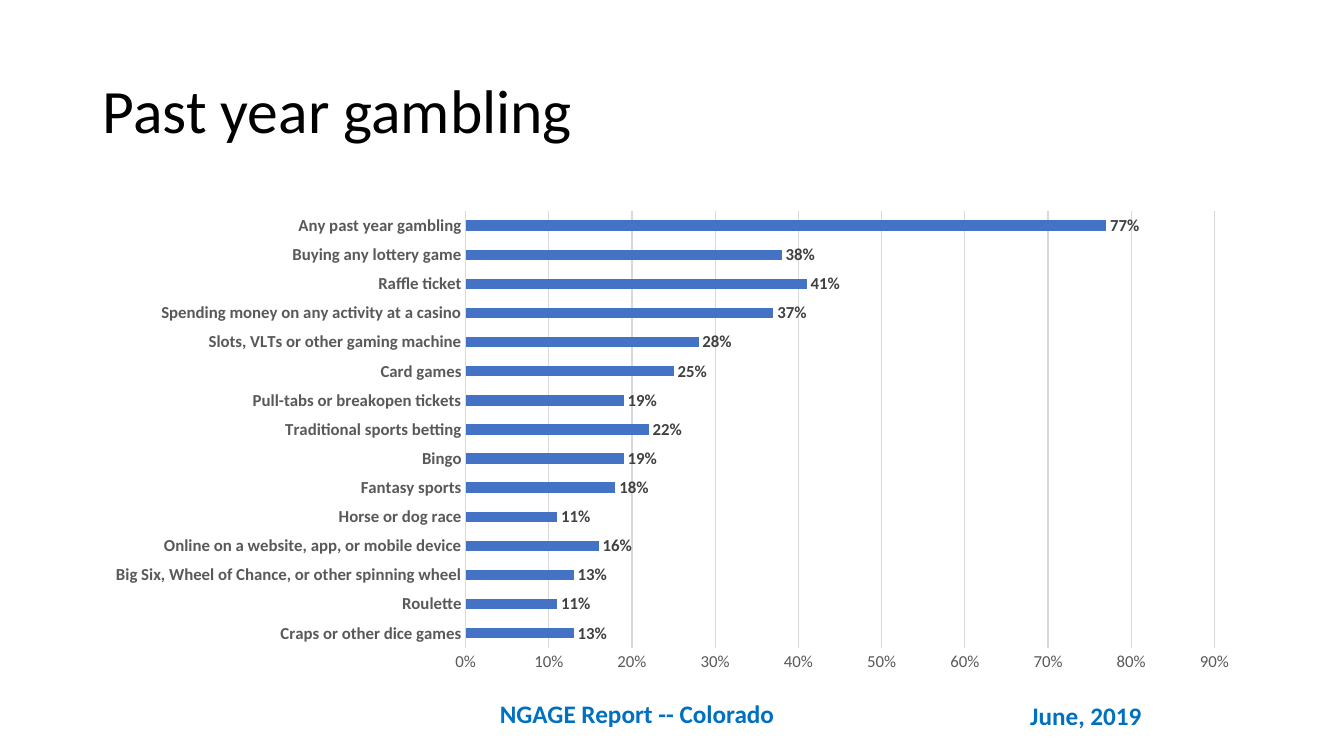
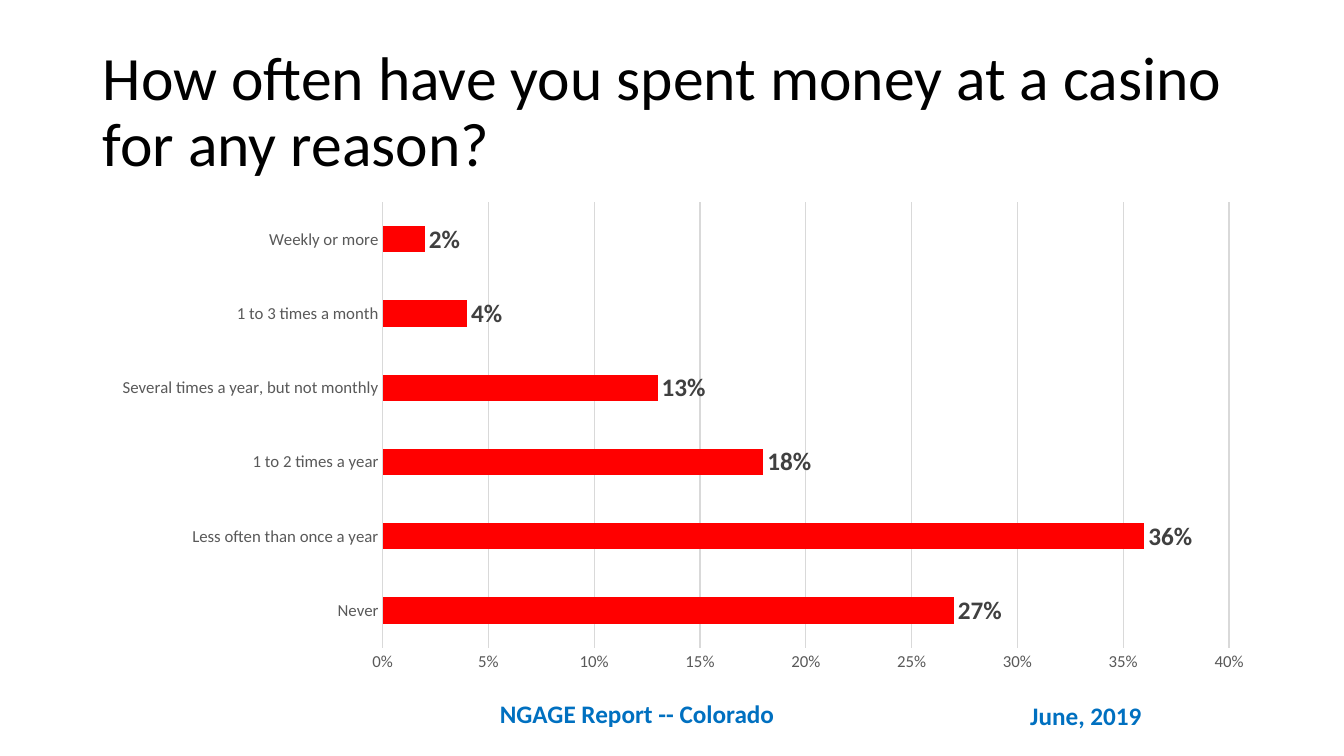
"""Build two bar chart slides on past year gambling and casino spending."""
from lxml.etree import SubElement as Sub
from pptx import Presentation
from pptx.chart.data import CategoryChartData as Data
from pptx.dml.color import RGBColor as RGB
from pptx.enum.chart import XL_CHART_TYPE as Kind
from pptx.enum.chart import XL_LABEL_POSITION as Spot
from pptx.enum.chart import XL_TICK_MARK as Tick
from pptx.enum.text import MSO_ANCHOR as Anchor
from pptx.enum.text import MSO_AUTO_SIZE as Fit
from pptx.enum.text import PP_ALIGN as Align
from pptx.oxml.ns import qn
from pptx.util import Pt

PX = 9144
FACE = "Calibri"
HUE = {"black": "000000", "foot": "0070C0", "axis": "595959",
       "label": "404040", "grid": "D9D9D9", "blue": "4472C4", "red": "FF0000"}
SIZE = (1333, 750)
TITLE = (92, 40, 1150, 145)
CHART = (92, 200, 1150, 476)
FOOT = [
    ("June, 2019", (1012, 690, 143, 40)),
    ("NGAGE Report -- Colorado", (486, 688, 360, 40)),
]
PAGES = [
    {"title": "Past year gambling",
     "hue": "blue", "bold": True, "size": 12, "top": 0.9, "step": 0.1,
     "plot": None,
     "rows": [
         ("Craps or other dice games", 0.13),
         ("Roulette", 0.11),
         ("Big Six, Wheel of Chance, or other spinning wheel", 0.13),
         ("Online on a website, app, or mobile device", 0.16),
         ("Horse or dog race", 0.11),
         ("Fantasy sports", 0.18),
         ("Bingo", 0.19),
         ("Traditional sports betting", 0.22),
         ("Pull-tabs or breakopen tickets", 0.19),
         ("Card games", 0.25),
         ("Slots, VLTs or other gaming machine", 0.28),
         ("Spending money on any activity at a casino", 0.37),
         ("Raffle ticket", 0.41),
         ("Buying any lottery game", 0.38),
         ("Any past year gambling", 0.77),
     ]},
    {"title": "How often have you spent money at a casino for any reason?",
     "hue": "red", "bold": False, "size": 18, "top": 0.4, "step": 0.05,
     "plot": {"x": 0.25, "y": 0, "w": 0.73, "h": 0.93},
     "rows": [
         ("Never", 0.27),
         ("Less often than once a year", 0.36),
         ("1 to 2 times a year", 0.18),
         ("Several times a year, but not monthly", 0.13),
         ("1 to 3 times a month", 0.04),
         ("Weekly or more", 0.02),
     ]},
]


def emu(box):
    return [n * PX for n in box]


def tint(hue):
    return RGB.from_string(HUE[hue])


def style(font, size, hue, bold=False):
    font.name, font.size, font.bold = FACE, Pt(size), bold
    font.color.rgb = tint(hue)


def put(shape, text, size, hue, bold=False, anchor=Anchor.TOP, lead=1.0):
    frame = shape.text_frame
    frame.text = text
    frame.word_wrap = True
    frame.auto_size = Fit.NONE
    frame.vertical_anchor = anchor
    para = frame.paragraphs[0]
    para.alignment = Align.LEFT
    para.line_spacing = lead
    style(para.runs[0].font, size, hue, bold)


def rule(line):
    line.color.rgb = tint("grid")
    line.width = Pt(0.75)


def pin(chart, plot):
    area = chart.element.find(".//" + qn("c:plotArea"))
    old = area.find(qn("c:layout"))
    if old is not None:
        area.remove(old)
    lay = Sub(area, qn("c:layout"))
    area.insert(0, lay)
    man = Sub(lay, qn("c:manualLayout"))
    Sub(man, qn("c:layoutTarget")).set("val", "inner")
    for key in "xy":
        Sub(man, qn(f"c:{key}Mode")).set("val", "edge")
    for key, val in plot.items():
        Sub(man, qn(f"c:{key}")).set("val", str(val))


def draw(slide, page):
    data = Data(number_format="0%")
    data.categories = [name for name, _ in page["rows"]]
    data.add_series("Series 1", [val for _, val in page["rows"]])
    chart = slide.shapes.add_chart(Kind.BAR_CLUSTERED, *emu(CHART), data).chart
    chart.has_title = chart.has_legend = False
    style(chart.font, 10, "black")

    cat, val = chart.category_axis, chart.value_axis
    for axis, bold in ((cat, page["bold"]), (val, False)):
        axis.major_tick_mark = axis.minor_tick_mark = Tick.NONE
        style(axis.tick_labels.font, 12, "axis", bold)
    rule(cat.format.line)
    val.format.line.fill.background()
    rule(val.major_gridlines.format.line)
    val.minimum_scale, val.maximum_scale = 0, page["top"]
    val.major_unit = page["step"]
    val.tick_labels.number_format = "0%"
    val.tick_labels.number_format_is_linked = False

    plot = chart.plots[0]
    plot.gap_width = 182
    plot.vary_by_categories = False
    bars = plot.series[0]
    bars.format.fill.solid()
    bars.format.fill.fore_color.rgb = tint(page["hue"])
    tags = bars.data_labels
    tags.show_value = True
    tags.number_format, tags.number_format_is_linked = "0%", False
    tags.position = Spot.OUTSIDE_END
    style(tags.font, page["size"], "label", True)
    if page["plot"]:
        pin(chart, page["plot"])


def main():
    deck = Presentation()
    deck.slide_width, deck.slide_height = emu(SIZE)
    layout = deck.slide_layouts[5]
    slides = [deck.slides.add_slide(layout) for _ in PAGES]

    for text, box in FOOT:
        foot = slides[0].shapes.add_textbox(*emu(box))
        put(foot, text, 18, "foot", bold=True)
        layout.shapes.element.append(foot.element)

    for slide, page in zip(slides, PAGES):
        head = slide.shapes.title
        head.left, head.top, head.width, head.height = emu(TITLE)
        put(head, page["title"], 44, "black", anchor=Anchor.MIDDLE, lead=0.9)
        draw(slide, page)
    deck.save("out.pptx")


if __name__ == "__main__":
    main()
